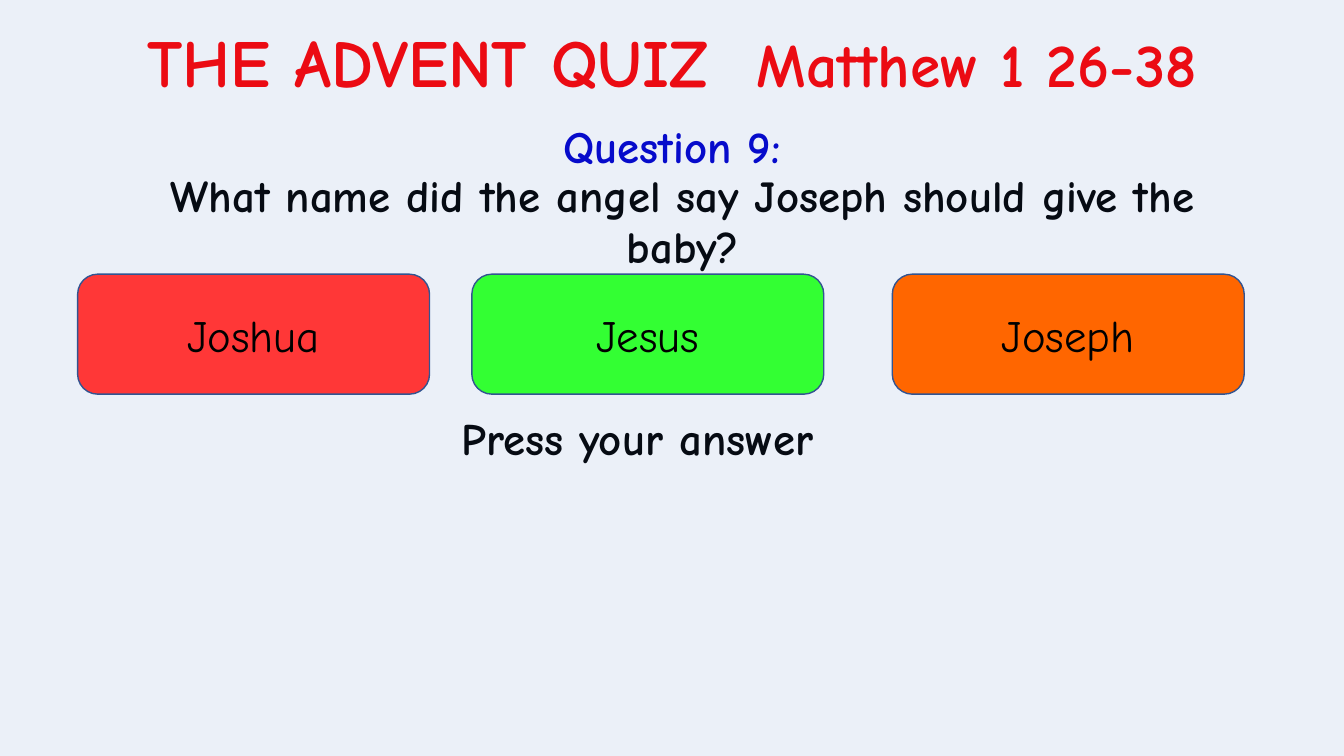
from dataclasses import dataclass

from lxml.etree import SubElement
from pptx import Presentation
from pptx.dml.color import RGBColor
from pptx.enum.shapes import MSO_SHAPE as Preset
from pptx.enum.text import MSO_ANCHOR as Anchor, PP_ALIGN as Align
from pptx.oxml.ns import qn
from pptx.shapes.autoshape import Shape
from pptx.slide import Slide
from pptx.text.text import _Paragraph as Paragraph
from pptx.util import Inches, Pt

FONT = "Comic Neue"
COLOURS = {
    "title": "FF0000",
    "question": "0000CC",
    "text": "000000",
    "tint": "4472C4",
    "outline": "325491",
    "red": "FF3737",
    "green": "33FF33",
    "orange": "FF6600",
}


@dataclass(frozen=True)
class Box:
    left: float
    top: float
    width: float
    height: float

    def lengths(self) -> list[Inches]:
        return [Inches(n) for n in (self.left, self.top, self.width, self.height)]


@dataclass(frozen=True)
class Run:
    text: str
    size: int = 32
    colour: str = "text"
    bold: bool = True


@dataclass(frozen=True)
class Label:
    box: Box
    runs: tuple[Run, ...]
    paragraph_format: dict
    wrap: bool = True


@dataclass(frozen=True)
class Answer:
    text: str
    left: float
    colour: str


LABELS = (
    Label(
        Box(0.19, 0.15, 12.96, 0.91),
        (Run("THE ADVENT QUIZ  ", 48, "title"), Run("Matthew 1 26-38", 44, "title")),
        {"alignment": Align.CENTER},
        wrap=False,
    ),
    Label(
        Box(0.99, 1.65, 11.57, 1.19),
        (Run("What name did the angel say Joseph should give the baby?"),),
        {"alignment": Align.CENTER, "line_spacing": Pt(36), "space_before": Pt(10)},
    ),
    Label(
        Box(4.48, 4.09, 6.73, 0.72),
        (Run("Press your answer"),),
        {"alignment": Align.LEFT, "line_spacing": 0.9, "space_before": Pt(7.5)},
    ),
    Label(
        Box(4.46, 1.13, 4.41, 0.64),
        (Run("Question 9:", colour="question"),),
        {"alignment": Align.CENTER},
    ),
)
ANSWERS = (
    Answer("Joshua", 0.77, "red"),
    Answer("Jesus", 4.68, "green"),
    Answer("Joseph", 8.85, "orange"),
)
TINT_BOX = Box(-0.33, -0.61, 14.19, 8.73)


def rgb(name: str) -> RGBColor:
    return RGBColor.from_string(COLOURS[name])


def write(paragraph: Paragraph, runs: tuple[Run, ...], paragraph_format: dict) -> None:
    for name, value in paragraph_format.items():
        setattr(paragraph, name, value)
    for item in runs:
        run = paragraph.add_run()
        run.text = item.text
        font_format = {"name": FONT, "size": Pt(item.size), "bold": item.bold}
        for name, value in font_format.items():
            setattr(run.font, name, value)
        run.font.color.rgb = rgb(item.colour)


def add_label(slide: Slide, label: Label) -> None:
    frame = slide.shapes.add_textbox(*label.box.lengths()).text_frame
    frame.word_wrap = label.wrap
    write(frame.paragraphs[0], label.runs, label.paragraph_format)


def add_panel(slide: Slide, preset: Preset, box: Box, colour: str) -> Shape:
    shape = slide.shapes.add_shape(preset, *box.lengths())
    shape.shadow.inherit = False
    shape.fill.solid()
    shape.fill.fore_color.rgb = rgb(colour)
    shape.line.color.rgb = rgb("outline")
    shape.line.width = Pt(1)
    return shape


def add_tint(slide: Slide) -> None:
    """Lay a 10 % opaque wash over the slide, bleeding past its edges."""
    shape = add_panel(slide, Preset.RECTANGLE, TINT_BOX, "tint")
    colour = shape.fill._xPr.find(qn("a:solidFill")).find(qn("a:srgbClr"))
    SubElement(colour, qn("a:alpha"), val="10000")


def add_answer(slide: Slide, answer: Answer) -> None:
    box = Box(answer.left, 2.72, 3.49, 1.19)
    frame = add_panel(slide, Preset.ROUNDED_RECTANGLE, box, answer.colour).text_frame
    frame.vertical_anchor = Anchor.MIDDLE
    write(frame.paragraphs[0], (Run(answer.text, bold=False),), {"alignment": Align.CENTER})


def main() -> None:
    presentation = Presentation()
    presentation.slide_width = Inches(13.33)
    presentation.slide_height = Inches(7.5)
    slide = presentation.slides.add_slide(presentation.slide_layouts[6])
    for label in LABELS:
        add_label(slide, label)
    add_tint(slide)
    for answer in ANSWERS:
        add_answer(slide, answer)
    presentation.save("out.pptx")


if __name__ == "__main__":
    main()
